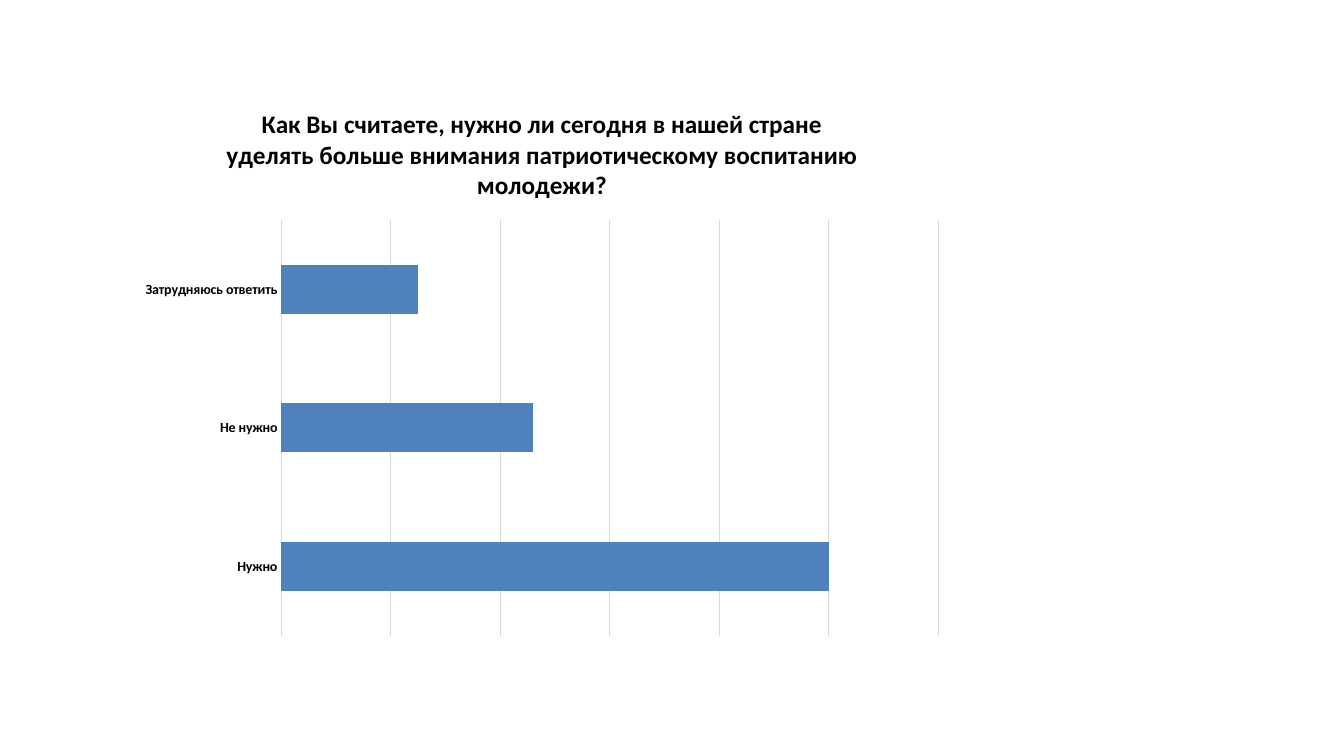
import pptx
import pptx.util
import pptx.chart.data
import pptx.dml.color
import pptx.enum.chart

TITLE = ("Как Вы считаете, нужно ли сегодня в нашей стране уделять "
         "больше внимания патриотическому воспитанию молодежи?")
VOTES = {"Нужно": 100, "Не нужно": 46, "Затрудняюсь ответить": 25}
BOX = (1.28, 0.85, 8.19, 5.57)
BLACK, BLUE, GREY = "000000", "4F81BD", "D9D9D9"

Inches = pptx.util.Inches
Pt = pptx.util.Pt
enums = pptx.enum.chart


def color(text):
    return pptx.dml.color.RGBColor.from_string(text)


def style(font, size, bold):
    font.name = "Calibri"
    font.size = Pt(size)
    font.bold = bold
    font.color.rgb = color(BLACK)


def rule(line):
    line.color.rgb = color(GREY)
    line.width = Pt(0.75)


def main():
    deck = pptx.Presentation()
    deck.slide_width, deck.slide_height = Inches(13.33), Inches(7.5)
    slide = deck.slides.add_slide(deck.slide_layouts[6])

    data = pptx.chart.data.CategoryChartData()
    data.categories = list(VOTES)
    data.add_series("Series 1", list(VOTES.values()))
    chart = slide.shapes.add_chart(
        enums.XL_CHART_TYPE.BAR_CLUSTERED, *map(Inches, BOX), data).chart
    style(chart.font, 10, False)
    chart.has_legend = False

    chart.has_title = True
    chart.chart_title.include_in_layout = False
    head = chart.chart_title.text_frame
    head.text = TITLE
    style(head.paragraphs[0].font, 18, True)

    names = chart.category_axis
    names.major_tick_mark = enums.XL_TICK_MARK.NONE
    names.minor_tick_mark = enums.XL_TICK_MARK.NONE
    style(names.tick_labels.font, 10, True)
    rule(names.format.line)

    scale = chart.value_axis
    scale.minimum_scale, scale.maximum_scale = 0, 120
    scale.major_unit = 20
    scale.visible = False
    scale.has_major_gridlines = True
    rule(scale.major_gridlines.format.line)

    plot = chart.plots[0]
    plot.gap_width = 182
    plot.vary_by_categories = False
    fill = plot.series[0].format.fill
    fill.solid()
    fill.fore_color.rgb = color(BLUE)

    deck.save("out.pptx")


if __name__ == "__main__":
    main()
